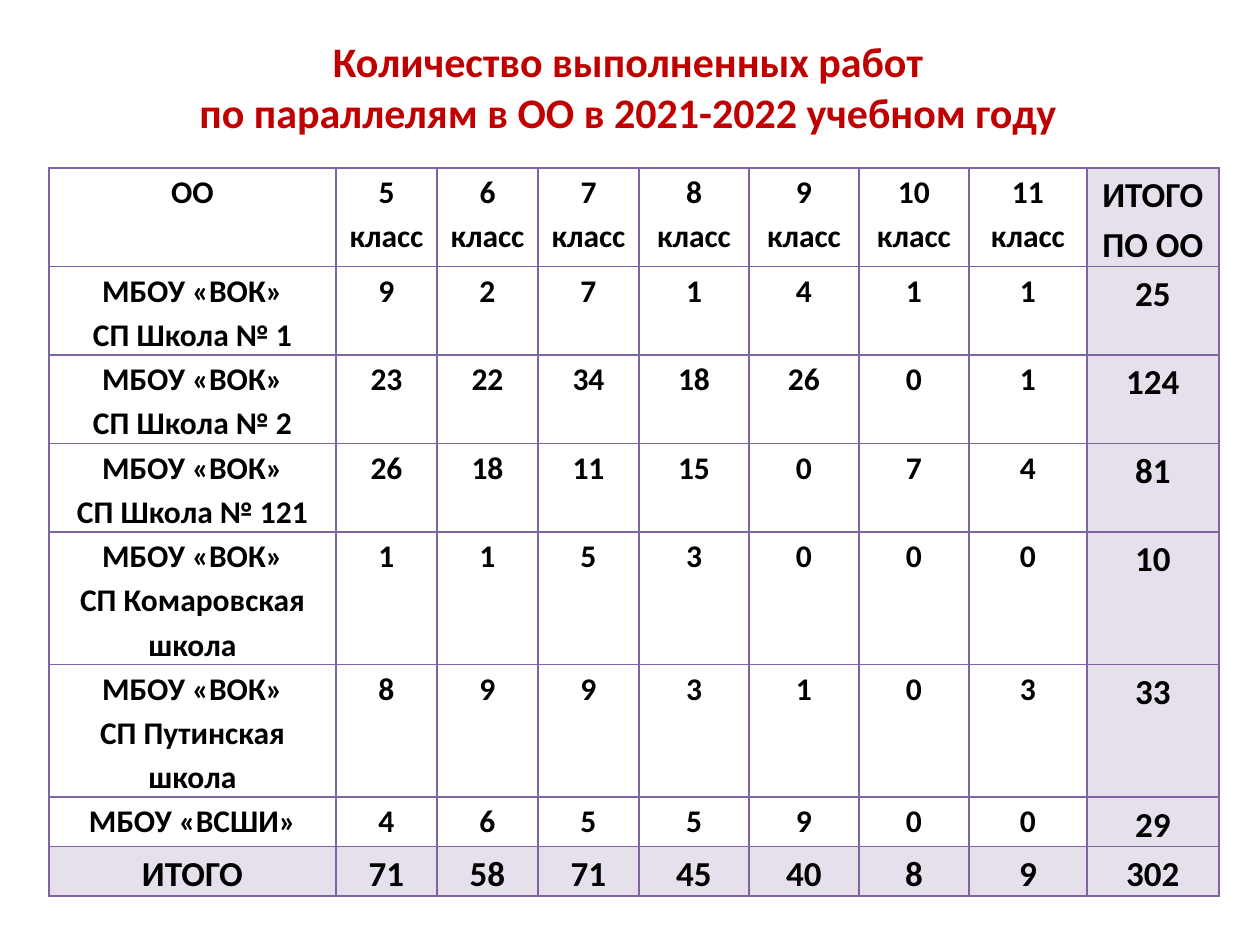
from dataclasses import dataclass

from lxml import etree
from pptx import Presentation
from pptx import util as u
from pptx.dml.color import RGBColor
from pptx.enum import text
from pptx.oxml import ns


@dataclass(frozen=True)
class Theme:
    font: str = "Calibri"
    ink: str = "000000"
    heading: str = "C00000"
    border: str = "8064A2"
    total_fill: str = "E6E0EC"
    title_size: int = 24
    body_size: int = 18
    total_size: int = 20
    line_spacing: float = 1.15


@dataclass(frozen=True)
class School:
    lines: tuple[str, ...]
    works: tuple[int, ...]


@dataclass(frozen=True)
class CellText:
    lines: tuple[str, ...]
    is_total: bool = False


THEME = Theme()
PX_PER_INCH = 126
TITLE = ("Количество выполненных работ", "по параллелям в ОО в 2021-2022 учебном году")
COLUMN_WIDTHS = (287, 101, 101, 101, 110, 110, 110, 118, 132)
ROW_HEIGHTS = (81, 81, 81, 81, 122, 122, 40, 40)
HEADINGS = (
    ("ОО",), ("5 класс",), ("6 класс",), ("7 класс",), ("8", "класс"),
    ("9", "класс"), ("10 класс",), ("11 класс",),
)
SCHOOLS = (
    School(("МБОУ «ВОК»", "СП Школа № 1"), (9, 2, 7, 1, 4, 1, 1)),
    School(("МБОУ «ВОК»", "СП Школа № 2"), (23, 22, 34, 18, 26, 0, 1)),
    School(("МБОУ «ВОК»", "СП Школа № 121"), (26, 18, 11, 15, 0, 7, 4)),
    School(("МБОУ «ВОК»", "СП Комаровская школа"), (1, 1, 5, 3, 0, 0, 0)),
    School(("МБОУ «ВОК»", "СП Путинская школа"), (8, 9, 9, 3, 1, 0, 3)),
    School(("МБОУ «ВСШИ»",), (4, 6, 5, 5, 9, 0, 0)),
)


def px(length: int) -> u.Emu:
    return u.Emu(round(length * 914400 / PX_PER_INCH))


def write_lines(frame, lines: tuple[str, ...], size: int, color: str,
                spacing: float | None = None) -> None:
    """Write each line as a centred bold paragraph."""
    for index, line in enumerate(lines):
        para = frame.add_paragraph() if index else frame.paragraphs[0]
        para.alignment = text.PP_ALIGN.CENTER
        para.line_spacing = spacing
        span = para.add_run()
        span.text = line
        span.font.name = THEME.font
        span.font.size = u.Pt(size)
        span.font.bold = True
        span.font.color.rgb = RGBColor.from_string(color)


def add_borders(cell) -> None:
    properties = cell._tc.get_or_add_tcPr()
    for side in ("a:lnL", "a:lnR", "a:lnT", "a:lnB"):
        line = etree.SubElement(properties, ns.qn(side), w=str(u.Pt(1)))
        fill = etree.SubElement(line, ns.qn("a:solidFill"))
        etree.SubElement(fill, ns.qn("a:srgbClr"), val=THEME.border)


def draw_cell(cell, content: CellText) -> None:
    cell.margin_left = cell.margin_right = px(9)
    cell.margin_top = cell.margin_bottom = 0
    add_borders(cell)
    if content.is_total:
        cell.fill.solid()
        cell.fill.fore_color.rgb = RGBColor.from_string(THEME.total_fill)
    else:
        cell.fill.background()
    size = THEME.total_size if content.is_total else THEME.body_size
    write_lines(cell.text_frame, content.lines, size, THEME.ink, THEME.line_spacing)


def table_rows() -> list[list[CellText]]:
    """Return headings, schools with their sums, and the row of sums by class."""
    header = [CellText(lines) for lines in HEADINGS]
    rows = [header + [CellText(("ИТОГО ПО ОО",), True)]]
    for school in SCHOOLS:
        works = [CellText((str(count),)) for count in school.works]
        total = CellText((str(sum(school.works)),), True)
        rows.append([CellText(school.lines), *works, total])
    sums = [sum(counts) for counts in zip(*(school.works for school in SCHOOLS))]
    rows.append([CellText((str(value),), True) for value in ("ИТОГО", *sums, sum(sums))])
    return rows


def draw_table(page) -> None:
    table = page.shapes.add_table(
        len(ROW_HEIGHTS), len(COLUMN_WIDTHS), px(49), px(168),
        px(sum(COLUMN_WIDTHS)), px(sum(ROW_HEIGHTS))).table
    table.first_row = table.horz_banding = False
    for column, width in zip(table.columns, COLUMN_WIDTHS):
        column.width = px(width)
    for row, height, contents in zip(table.rows, ROW_HEIGHTS, table_rows()):
        row.height = px(height)
        for cell, content in zip(row.cells, contents):
            draw_cell(cell, content)


def draw_title(page) -> None:
    box = page.shapes.add_textbox(px(29), px(29), px(1198), px(152))
    frame = box.text_frame
    frame.word_wrap = False
    frame.vertical_anchor = text.MSO_ANCHOR.MIDDLE
    frame.margin_bottom = px(44)
    write_lines(frame, TITLE, THEME.title_size, THEME.heading)


def main() -> None:
    deck = Presentation()
    deck.slide_width, deck.slide_height = px(1260), px(945)
    page = deck.slides.add_slide(deck.slide_layouts[6])
    draw_table(page)
    draw_title(page)
    deck.save("out.pptx")


if __name__ == "__main__":
    main()
